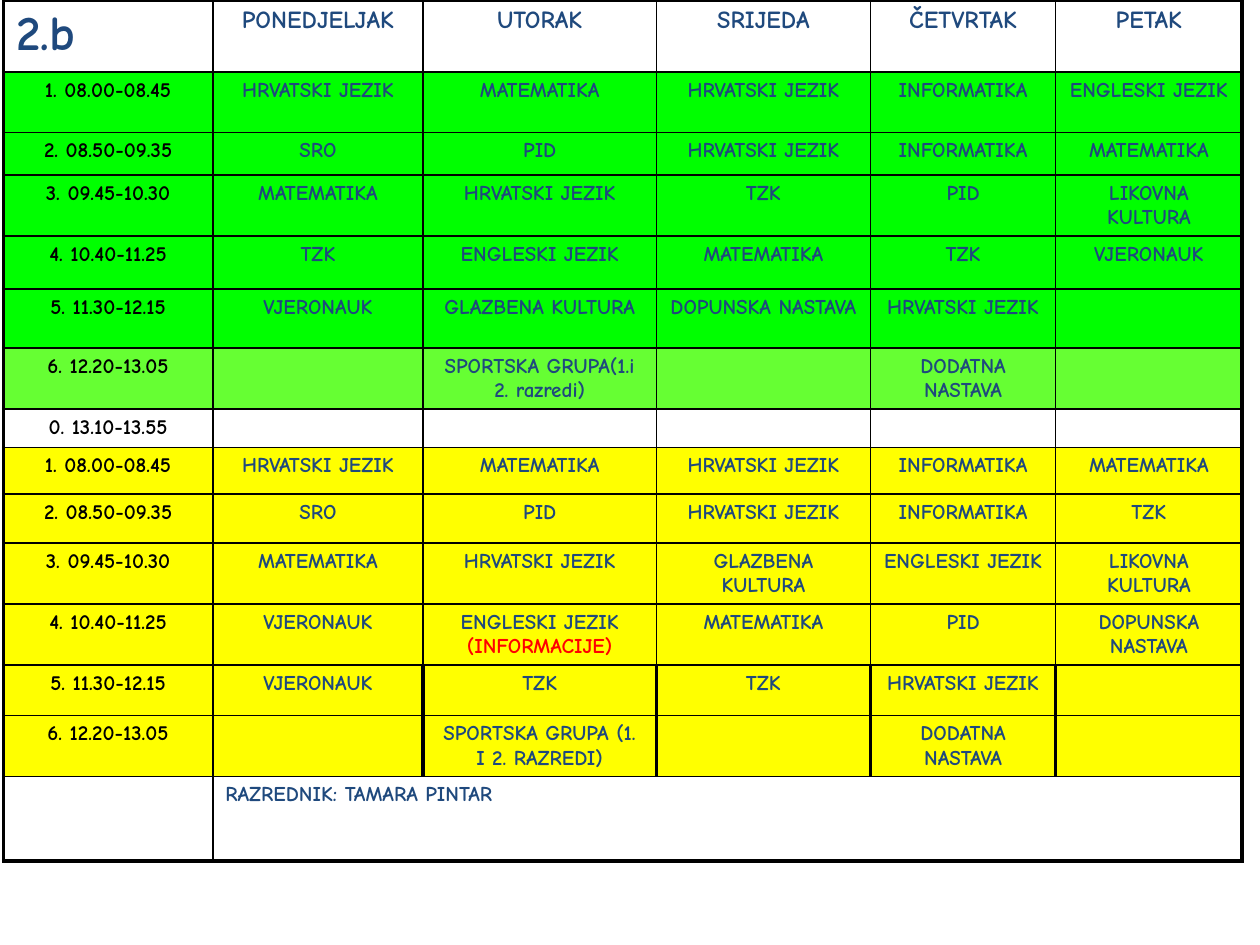
import dataclasses

import lxml.etree
import pptx
import pptx.dml.color
import pptx.enum.text
import pptx.oxml.ns
import pptx.table
import pptx.util

Cm = pptx.util.Cm
Pt = pptx.util.Pt
qn = pptx.oxml.ns.qn

FONT = "Comic Neue"
COLORS = {
    "blue": "1F497D",
    "black": "000000",
    "red": "FF0000",
    "green": "00FF00",
    "lime": "66FF33",
    "white": "FFFFFF",
    "yellow": "FFFF00",
}
THIN, THICK = 1, 2.25
WIDTHS = (4.22, 4.24, 4.7, 4.32, 3.73, 3.76)

CRO, MAT, ENG = "HRVATSKI JEZIK", "MATEMATIKA", "ENGLESKI JEZIK"
INF, REL, ART = "INFORMATIKA", "VJERONAUK", "LIKOVNA KULTURA"
MUS, SUP, ADD = "GLAZBENA KULTURA", "DOPUNSKA NASTAVA", "DODATNA NASTAVA"


@dataclasses.dataclass
class Row:
    height: float
    fill: str
    texts: tuple[str, ...]
    split: bool = False  # thick lines between the days


ROWS = (
    Row(1.45, "", ("2.b", "PONEDJELJAK", "UTORAK", "SRIJEDA", "ČETVRTAK", "PETAK")),
    Row(1.22, "green", ("1. 08.00-08.45", CRO, MAT, CRO, INF, ENG)),
    Row(0.86, "green", ("2. 08.50-09.35", "SRO", "PID", CRO, INF, MAT)),
    Row(0.99, "green", ("3. 09.45-10.30", MAT, CRO, "TZK", "PID", ART)),
    Row(1.07, "green", ("4. 10.40-11.25", "TZK", ENG, MAT, "TZK", REL)),
    Row(1.19, "green", ("5. 11.30-12.15", REL, MUS, SUP, CRO, "")),
    Row(0.74, "lime", ("6. 12.20-13.05", "", "SPORTSKA GRUPA(1.i 2. razredi)", "", ADD, "")),
    Row(0.76, "white", ("0. 13.10-13.55", "", "", "", "", "")),
    Row(0.94, "yellow", ("1. 08.00-08.45", CRO, MAT, CRO, INF, MAT)),
    Row(0.99, "yellow", ("2. 08.50-09.35", "SRO", "PID", CRO, INF, "TZK")),
    Row(0.79, "yellow", ("3. 09.45-10.30", MAT, CRO, MUS, ENG, ART)),
    Row(0.99, "yellow", ("4. 10.40-11.25", REL, ENG + " |(INFORMACIJE)", MAT, "PID", SUP)),
    Row(1.02, "yellow", ("5. 11.30-12.15", REL, "TZK", "TZK", CRO, ""), True),
    Row(1.02, "yellow", ("6. 12.20-13.05", "", "SPORTSKA GRUPA (1. I 2. RAZREDI)", "", ADD, ""), True),
    Row(1.7, "", ("", "RAZREDNIK: TAMARA PINTAR", "", "", "", "")),
)
LAST_ROW, LAST_COL = len(ROWS) - 1, len(WIDTHS) - 1


def rgb(name: str) -> pptx.dml.color.RGBColor:
    return pptx.dml.color.RGBColor.from_string(COLORS[name])


def draw_borders(cell: pptx.table._Cell, row: int, col: int) -> None:
    split = ROWS[row].split
    thick = {
        "lnL": col == 0 or split and col > 1,
        "lnR": col == LAST_COL or split and col > 0 or cell.is_merge_origin,
        "lnT": row == 0,
        "lnB": row == LAST_ROW,
    }
    props = cell._tc.get_or_add_tcPr()
    for side, wide in thick.items():
        width = Pt(THICK if wide else THIN)
        line = lxml.etree.SubElement(props, qn("a:" + side), w=str(width))
        fill = lxml.etree.SubElement(line, qn("a:solidFill"))
        lxml.etree.SubElement(fill, qn("a:srgbClr"), val=COLORS["black"])


def write_text(cell: pptx.table._Cell, row: int, col: int) -> None:
    """Fill in the cell; a bar in the text starts a new run."""
    size = 12 if row else 14 if col else 28
    color = "black" if col == 0 and row else "blue"
    para = cell.text_frame.paragraphs[0]
    if row < LAST_ROW and (row or col):
        para.alignment = pptx.enum.text.PP_ALIGN.CENTER
    text = ROWS[row].texts[col]
    if not text:
        # The end mark keeps an empty cell from forcing a taller row
        lxml.etree.SubElement(para._p, qn("a:endParaRPr"), sz=str(size * 100))
        return
    for part in text.split("|"):
        run = para.add_run()
        run.text = part
        run.font.name = FONT
        run.font.size = Pt(size)
        run.font.bold = True
        run.font.color.rgb = rgb("red" if part.startswith("(") else color)


def draw_table(slide: pptx.slide.Slide) -> None:
    frame = slide.shapes.add_table(
        len(ROWS), len(WIDTHS), Cm(0.07), Cm(0),
        Cm(sum(WIDTHS)), Cm(sum(row.height for row in ROWS)),
    )
    table = frame.table
    table.first_row = table.horz_banding = False
    for column, width in zip(table.columns, WIDTHS):
        column.width = Cm(width)
    table.cell(LAST_ROW, 1).merge(table.cell(LAST_ROW, LAST_COL))
    for r, row in enumerate(ROWS):
        table.rows[r].height = Cm(row.height)
        for c in range(len(WIDTHS)):
            cell = table.cell(r, c)
            draw_borders(cell, r, c)
            if row.fill:
                cell.fill.solid()
                cell.fill.fore_color.rgb = rgb(row.fill)
            else:
                cell.fill.background()
            write_text(cell, r, c)


def main() -> None:
    deck = pptx.Presentation()
    deck.slide_width, deck.slide_height = Cm(25.4), Cm(19.05)
    draw_table(deck.slides.add_slide(deck.slide_layouts[6]))
    deck.save("out.pptx")


if __name__ == "__main__":
    main()
